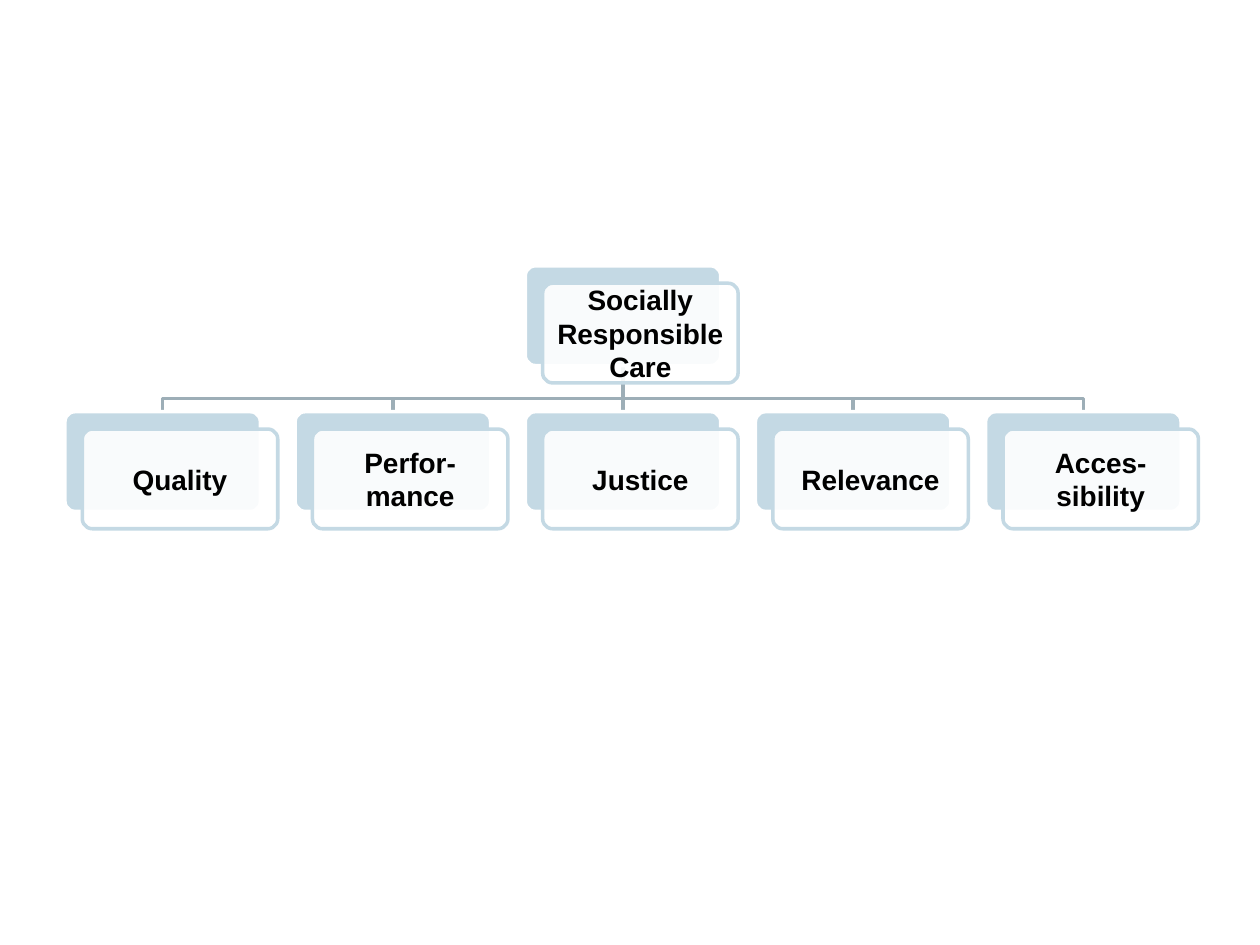
from dataclasses import dataclass

from lxml.etree import SubElement
from pptx import Presentation
from pptx.dml.color import RGBColor
from pptx.enum.shapes import MSO_CONNECTOR, MSO_SHAPE
from pptx.enum.text import MSO_ANCHOR, PP_ALIGN
from pptx.oxml.ns import qn
from pptx.util import Cm, Pt


@dataclass(frozen=True)
class Theme:
    card = RGBColor(0xC4, 0xD9, 0xE4)
    branch = RGBColor(0x9D, 0xAE, 0xB7)
    white = RGBColor(0xFF, 0xFF, 0xFF)
    text = RGBColor(0x00, 0x00, 0x00)
    font = "Arial"
    text_size = Pt(16)
    line_width = Pt(2)


theme = Theme()

# Layout
card_width, card_height = Cm(3.94), Cm(2.01)
card_offset = Cm(0.35)
first_left, pitch = Cm(1.31), Cm(4.64)
root_top, child_top = Cm(5.36), Cm(8.3)
bar_y = Cm(8.03)
root_bottom = root_top + card_height
children = ["Quality", "Perfor-\nmance", "Justice", "Relevance", "Acces-\nsibility"]
child_lefts = [first_left + index * pitch for index in range(len(children))]
middle = len(children) // 2
root_left = child_lefts[middle]
root_center = root_left + card_width // 2

deck = Presentation()
deck.slide_width, deck.slide_height = Cm(25.4), Cm(19.05)
page = deck.slides.add_slide(deck.slide_layouts[6])


def add_rounded_box(left, top, fill_color, line_color):
    box = page.shapes.add_shape(
        MSO_SHAPE.ROUNDED_RECTANGLE, left, top, card_width, card_height)
    box.adjustments[0] = 0.1
    box.shadow.inherit = False
    box.fill.solid()
    box.fill.fore_color.rgb = fill_color
    box.line.color.rgb = line_color
    box.line.width = theme.line_width
    return box


def add_card(left, top, label):
    """Draw a coloured back box and a translucent labelled front box."""
    back = add_rounded_box(left, top, theme.card, theme.white)
    front = add_rounded_box(left + card_offset, top + card_offset, theme.white, theme.card)
    color = front.fill._xPr.find(qn("a:solidFill"))[0]
    SubElement(color, qn("a:alpha"), val="90000")

    frame = front.text_frame
    frame.word_wrap = True
    frame.vertical_anchor = MSO_ANCHOR.MIDDLE
    frame.margin_left = frame.margin_right = Cm(0.1)
    frame.margin_top = frame.margin_bottom = Cm(0)
    frame.text = label
    for para in frame.paragraphs:
        para.alignment = PP_ALIGN.CENTER
        for span in para.runs:
            span.font.name = theme.font
            span.font.size = theme.text_size
            span.font.bold = True
            span.font.color.rgb = theme.text
    return back


# Bent branches to the outer cards
for index, left in enumerate(child_lefts):
    if index == middle:
        continue
    child_center = left + card_width // 2
    builder = page.shapes.build_freeform(root_center, root_bottom)
    builder.add_line_segments(
        [(root_center, bar_y), (child_center, bar_y), (child_center, child_top)], close=False)
    branch = builder.convert_to_shape()
    branch.shadow.inherit = False
    branch.fill.background()
    branch.line.color.rgb = theme.branch
    branch.line.width = theme.line_width

# Straight branch to the middle card
trunk = page.shapes.add_connector(
    MSO_CONNECTOR.STRAIGHT, root_center, root_bottom, root_center, child_top)
trunk.line.color.rgb = theme.branch
trunk.line.width = theme.line_width
SubElement(trunk._element.spPr, qn("a:effectLst"))

# Cards
root_card = add_card(root_left, root_top, "Socially\nResponsible\nCare")
child_cards = [add_card(left, child_top, label) for left, label in zip(child_lefts, children)]

# Join the trunk to the cards
trunk.begin_connect(root_card, 2)
trunk.end_connect(child_cards[middle], 0)

deck.save("out.pptx")
